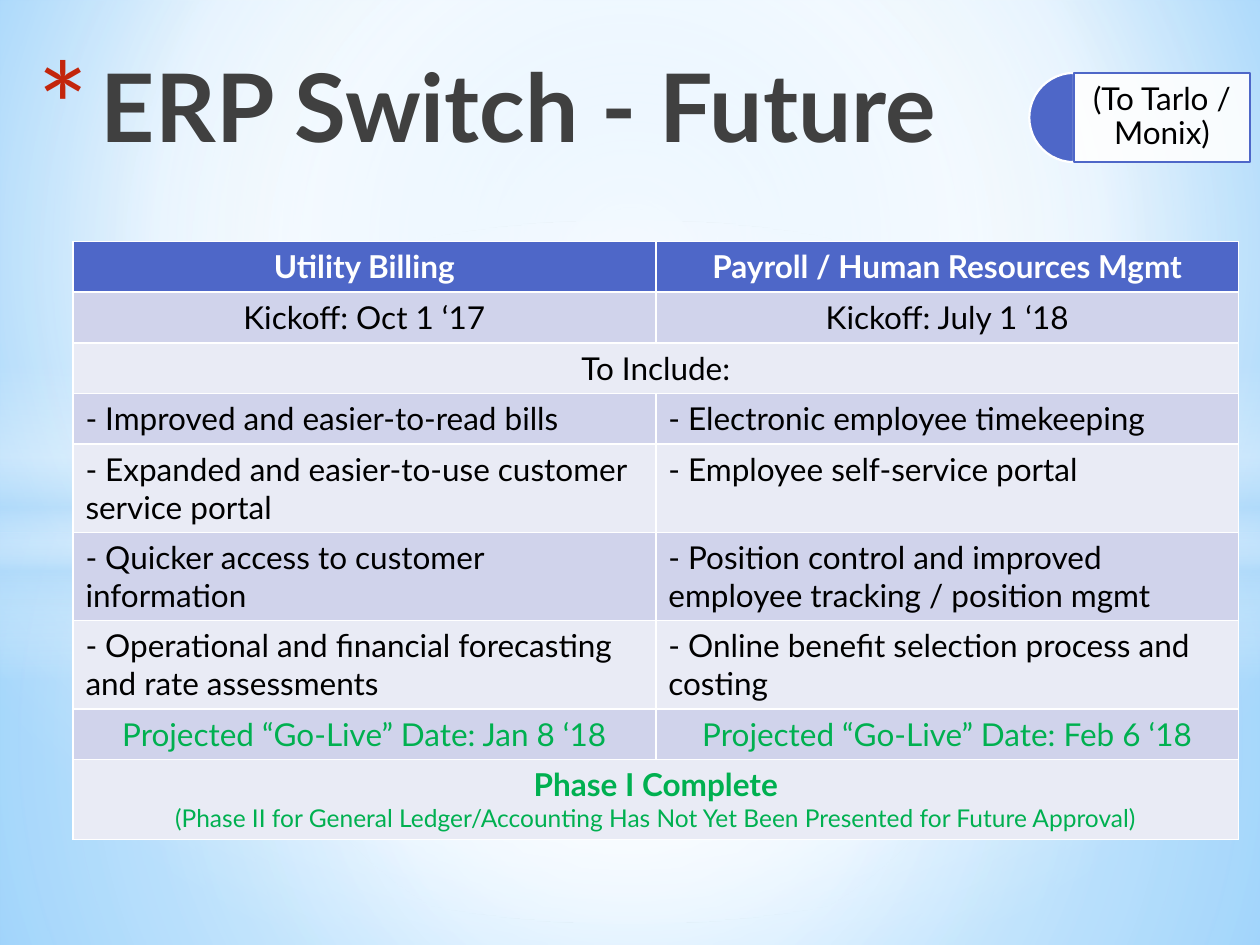
"""Build the ERP switch slide with its phase table and system badge."""
from lxml import etree
from pptx import Presentation
from pptx.dml.color import RGBColor
from pptx.enum.shapes import MSO_SHAPE as Shape
from pptx.enum.text import MSO_ANCHOR as Anchor, MSO_AUTO_SIZE as AutoSize, PP_ALIGN as Align
from pptx.oxml.ns import qn
from pptx.util import Cm, Pt

FONT = "Lato"
BLUE, WHITE, BLACK, GREEN = "4E67C8", "FFFFFF", "000000", "00B050"
PALE = "B4DCFA"
BANDS = ("E9EBF5", "D0D3EB")
CENTER = (50, 50, 50, 50)

TITLE = "ERP Switch - Future"
BADGE = "(To Tarlo / Monix)"
BACKGROUND = [(0, "9ED5FF", 100), (60, WHITE, 100), (100, "5BB9FF", 100)]
GLOWS = [
    (Shape.RECTANGLE, (0, 10.74, 25.4, 8.31), [(0, WHITE, 91), (37, WHITE, 76), (100, PALE, 79)], CENTER),
    (Shape.RECTANGLE, (0, 0, 25.4, 10.74), [(0, WHITE, 89), (48, WHITE, 62), (100, PALE, 79)], CENTER),
    (Shape.RECTANGLE, (0, 7.37, 25.4, 6.35),
     [(0, WHITE, 0), (29, WHITE, 30), (45, PALE, 40), (55, WHITE, 26), (65, PALE, 60), (100, WHITE, 0)], None),
    (Shape.OVAL, (0, 4.45, 25.4, 14.17), [(0, WHITE, 100), (54, WHITE, 0)], CENTER),
]
ROWS = [
    (1.02, "Utility Billing", "Payroll / Human Resources Mgmt"),
    (1.02, "Kickoff: Oct 1 ‘17", "Kickoff: July 1 ‘18"),
    (1.02, "To Include:"),
    (1.02, "- Improved and easier-to-read bills", "- Electronic employee timekeeping"),
    (1.78, "- Expanded and easier-to-use customer service portal", "- Employee self-service portal"),
    (1.78, "- Quicker access to customer information",
     "- Position control and improved employee tracking / position mgmt"),
    (1.78, "- Operational and financial forecasting and rate assessments",
     "- Online benefit selection process and costing"),
    (1.02, "Projected “Go-Live” Date: Jan 8 ‘18", "Projected “Go-Live” Date: Feb 6 ‘18"),
    (1.6, "Phase I Complete\n(Phase II for General Ledger/Accounting Has Not Yet Been Presented for Future Approval)"),
]


def color(value):
    return RGBColor.from_string(value)


def add(parent, tag, **attributes):
    return etree.SubElement(parent, qn(tag), {key: str(value) for key, value in attributes.items()})


def set_gradient(properties, stops, focus):
    """Replace the solid fill by a circular gradient, or a vertical one without focus."""
    solid = properties.find(qn("a:solidFill"))
    gradient = etree.Element(qn("a:gradFill"), rotWithShape="1")
    stop_list = add(gradient, "a:gsLst")
    for position, value, alpha in stops:
        stop = add(stop_list, "a:gs", pos=position * 1000)
        add(add(stop, "a:srgbClr", val=value), "a:alpha", val=alpha * 1000)
    if focus:
        sides = {side: part * 1000 for side, part in zip("ltrb", focus)}
        add(add(gradient, "a:path", path="circle"), "a:fillToRect", **sides)
    else:
        add(gradient, "a:lin", ang=5400000, scaled=0)
    properties.replace(solid, gradient)


def add_shape(shapes, kind, box, fill, line=None):
    shape = shapes.add_shape(kind, *map(Cm, box))
    shape.shadow.inherit = False
    shape.fill.solid()
    shape.fill.fore_color.rgb = color(fill)
    if line:
        shape.line.color.rgb = color(line)
        shape.line.width = Pt(1.25)
    else:
        shape.line.fill.background()
    return shape


def format_runs(paragraph, size, value, bold=False, align=Align.CENTER):
    paragraph.alignment = align
    for run in paragraph.runs:
        run.font.name, run.font.size, run.font.bold = FONT, Pt(size), bold
        run.font.color.rgb = color(value)


def add_backdrop(slide):
    slide.background.fill.solid()
    slide.background.fill.fore_color.rgb = color(WHITE)
    set_gradient(slide._element.find(".//" + qn("p:bgPr")), BACKGROUND, (20, 10, 20, 60))
    for kind, box, stops, focus in GLOWS:
        set_gradient(add_shape(slide.shapes, kind, box, WHITE)._element.spPr, stops, focus)


def set_title(slide):
    title = slide.shapes.title
    title.left, title.top, title.width, title.height = map(Cm, (0, 0.84, 20.52, 3.38))
    frame = title.text_frame
    frame.text = TITLE
    frame.vertical_anchor = Anchor.TOP
    frame.auto_size = AutoSize.NONE
    paragraph = frame.paragraphs[0]
    format_runs(paragraph, 54, "404040", True, Align.LEFT)
    properties = paragraph._p.get_or_add_pPr()
    properties.set("marL", str(Cm(1.78)))
    properties.set("indent", str(Cm(-1.27)))
    add(add(properties, "a:buClr"), "a:srgbClr", val="C3260C")
    add(properties, "a:buSzPct", val=128000)
    add(properties, "a:buFont", typeface=FONT)
    add(properties, "a:buChar", char="*")
    slide.shapes._spTree.append(title._element)


def add_badge(slide):
    group = slide.shapes.add_group_shape()
    pie = add_shape(group.shapes, Shape.PIE, (20.75, 1.47, 1.8, 1.8), BLUE, WHITE)
    pie.adjustments[0], pie.adjustments[1] = 54, 162
    label = add_shape(group.shapes, Shape.RECTANGLE, (21.65, 1.47, 3.55, 1.8), WHITE, BLUE)
    add(label._element.spPr.find(".//" + qn("a:srgbClr")), "a:alpha", val=90000)
    frame = label.text_frame
    frame.text = BADGE
    frame.word_wrap = True
    frame.vertical_anchor = Anchor.MIDDLE
    frame.margin_left = frame.margin_right = frame.margin_top = frame.margin_bottom = Cm(0.18)
    frame.paragraphs[0].line_spacing = 0.9
    format_runs(frame.paragraphs[0], 18, BLACK)


def add_phases(slide):
    height = sum(row[0] for row in ROWS)
    table = slide.shapes.add_table(len(ROWS), 2, Cm(1.47), Cm(4.87), Cm(23.5), Cm(height)).table
    for index, (row_height, *texts) in enumerate(ROWS):
        table.rows[index].height = Cm(row_height)
        if len(texts) == 1:
            table.cell(index, 0).merge(table.cell(index, 1))
        header, closing = index == 0, index >= len(ROWS) - 2
        value = WHITE if header else GREEN if closing else BLACK
        for column, text in enumerate(texts):
            cell = table.cell(index, column)
            cell.fill.solid()
            cell.fill.fore_color.rgb = color(BLUE if header else BANDS[index % 2])
            cell.text_frame.text = text
            align = Align.LEFT if text.startswith("-") else Align.CENTER
            first, *notes = cell.text_frame.paragraphs
            format_runs(first, 18, value, header or bool(notes), align)
            for note in notes:
                format_runs(note, 14, value)


def main():
    presentation = Presentation()
    presentation.slide_width, presentation.slide_height = Cm(25.4), Cm(19.05)
    slide = presentation.slides.add_slide(presentation.slide_layouts[5])
    add_backdrop(slide)
    set_title(slide)
    add_badge(slide)
    add_phases(slide)
    presentation.save("out.pptx")


if __name__ == "__main__":
    main()
